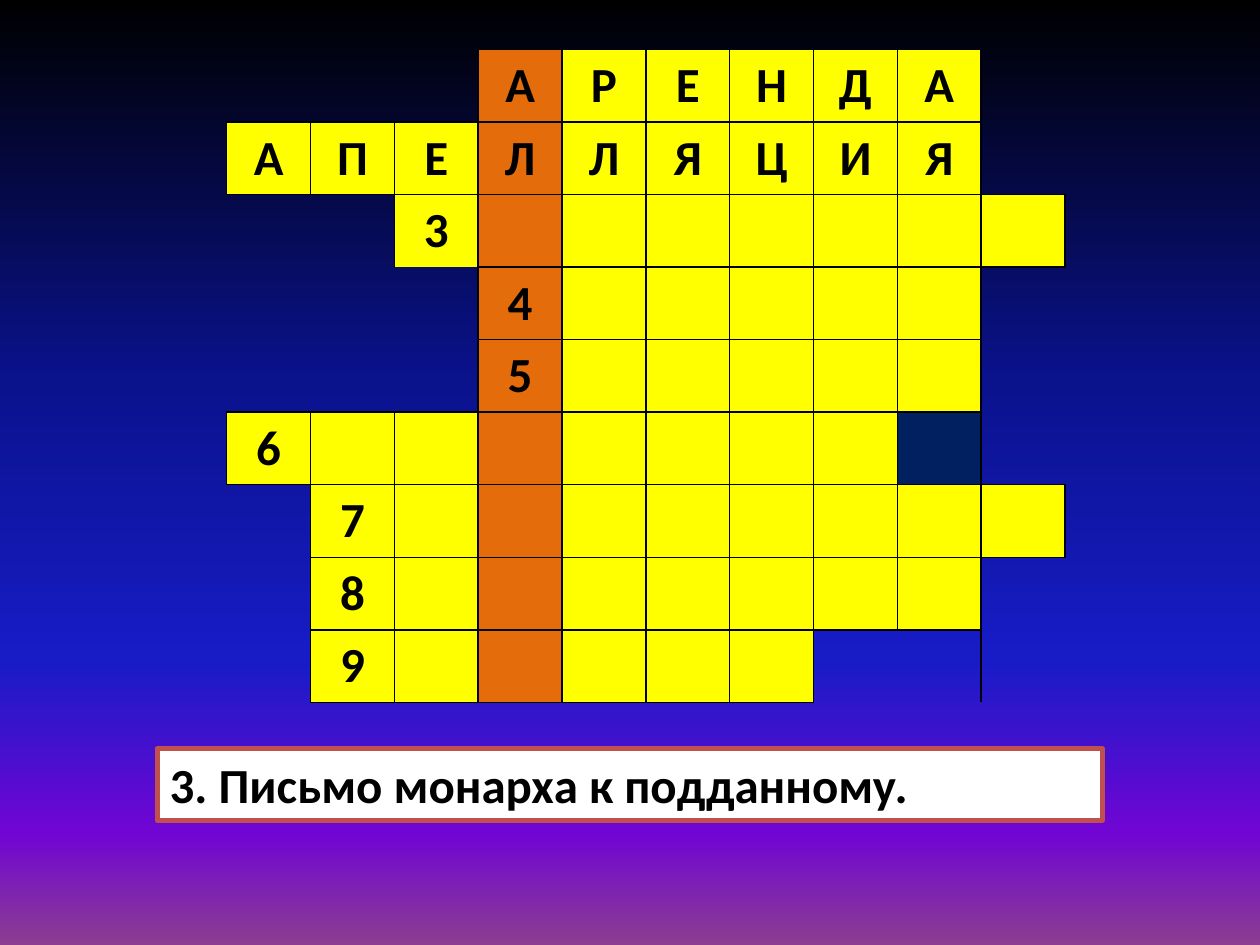
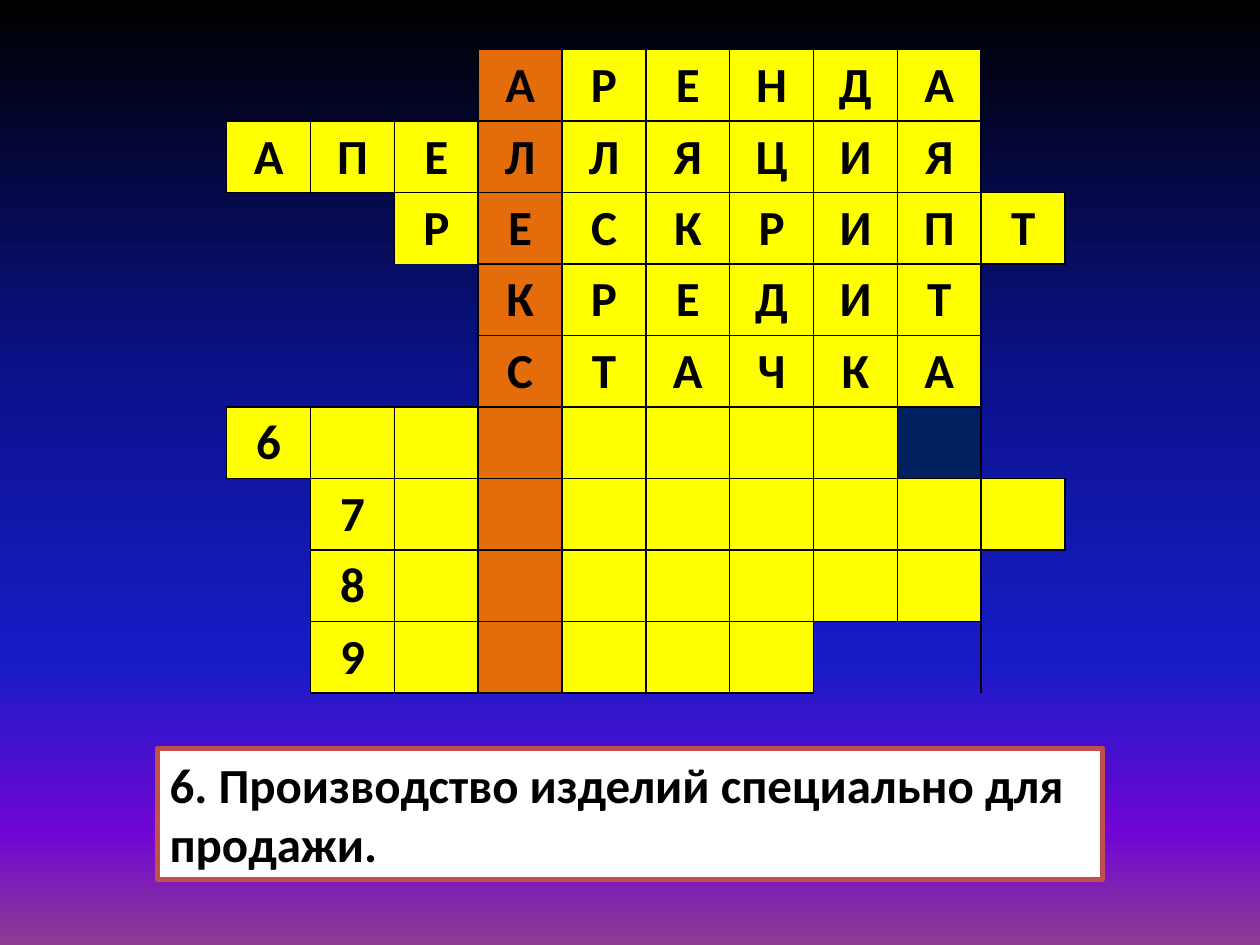
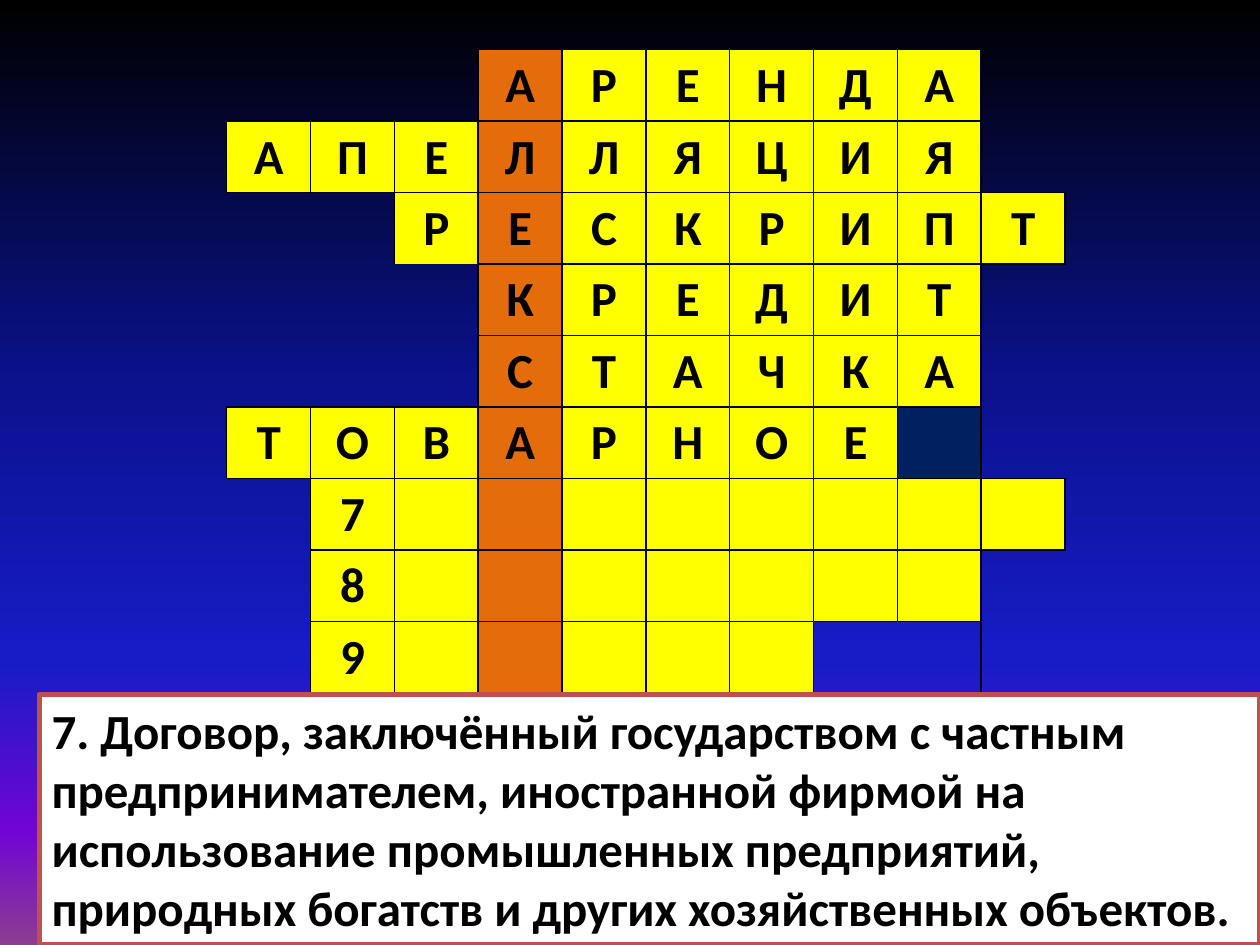
from dataclasses import dataclass
from typing import NamedTuple

from lxml.etree import SubElement
from pptx import Presentation
from pptx.dml.color import RGBColor
from pptx.enum.shapes import MSO_SHAPE
from pptx.enum.text import MSO_ANCHOR, MSO_AUTO_SIZE, PP_ALIGN
from pptx.oxml.ns import qn
from pptx.util import Cm, Pt

BLACK = RGBColor(0x00, 0x00, 0x00)
WHITE = RGBColor(0xFF, 0xFF, 0xFF)
YELLOW = RGBColor(0xFF, 0xFF, 0x00)
ORANGE = RGBColor(0xE4, 0x6C, 0x0A)
NAVY = RGBColor(0x00, 0x20, 0x60)
RED = RGBColor(0xC0, 0x50, 0x4D)
SKY = {
    0: BLACK,
    40: RGBColor(0x0A, 0x12, 0x8C),
    70: RGBColor(0x18, 0x1C, 0xC7),
    88: RGBColor(0x70, 0x05, 0xD4),
    100: RGBColor(0x8C, 0x3D, 0x91),
}

FONT = {"name": "Calibri", "size": Pt(28), "bold": True}
PLAIN = "{2D5ABB26-0587-4C30-8999-92F81FD0307C}"  # table style without lines or fills
SIDES = "LRTB"
COLS = 10
KEY = 3  # column in which the hidden name is read downwards
WIDE, HIGH = Cm(1.69), Cm(1.44)


class Word(NamedTuple):
    start: int
    size: int
    text: str = ""


class Gap(NamedTuple):
    """Cells outside the words, merged, with lines on the given sides."""
    row: int
    col: int
    rows: int
    cols: int
    sides: str
    fill: RGBColor | None = None


@dataclass
class Clue:
    solved: int
    text: str
    left: float = 3.17
    top: float = 15.09
    width: float = 19.05
    height: float = 1.45


WORDS = [
    Word(3, 6, "АРЕНДА"),
    Word(0, 9, "АПЕЛЛЯЦИЯ"),
    Word(2, 8, "РЕСКРИПТ"),
    Word(3, 6, "КРЕДИТ"),
    Word(3, 6, "СТАЧКА"),
    Word(0, 8, "ТОВАРНОЕ"),
    Word(1, 9),
    Word(1, 8),
    Word(1, 6),
]
GAPS = [
    Gap(0, 0, 1, 3, "RB"),
    Gap(0, 9, 2, 1, "LB"),
    Gap(2, 0, 1, 2, "RT"),
    Gap(3, 0, 2, 3, "RB"),
    Gap(3, 9, 3, 1, "LTB"),
    Gap(5, 8, 1, 1, "LTB", NAVY),
    Gap(6, 0, 3, 1, "RT"),
    Gap(7, 9, 2, 1, "LT"),
    Gap(8, 7, 1, 2, "LT"),
]
CLUES = [
    Clue(2, "3. Письмо монарха к подданному."),
    Clue(5, "6. Производство изделий специально для продажи.", height=2.64),
    Clue(6, "7. Договор, заключённый государством с частным предпринимателем, "
            "иностранной фирмой на использование промышленных предприятий, "
            "природных богатств и других хозяйственных объектов.",
         0.79, 14, 24.61, 5.05),
]


def paint_sky(master) -> None:
    fill = master.background.fill
    fill.gradient()
    fill.gradient_angle = 270
    stops = master.element.find(".//" + qn("a:gsLst"))
    for stop in list(stops):
        stops.remove(stop)
    for place, shade in SKY.items():
        stop = SubElement(stops, qn("a:gs"), pos=str(place * 1000))
        SubElement(stop, qn("a:srgbClr"), val=str(shade))


def write(frame, text: str, align: PP_ALIGN) -> None:
    para = frame.paragraphs[0]
    para.alignment = align
    run = para.add_run()
    run.text = text
    for name, value in FONT.items():
        setattr(run.font, name, value)
    run.font.color.rgb = BLACK


def style(cell, fill: RGBColor | None, sides: str = SIDES) -> None:
    """Fill a cell and draw lines on the given sides only."""
    if fill is None:
        cell.fill.background()
    else:
        cell.fill.solid()
        cell.fill.fore_color.rgb = fill
    props = cell._tc.get_or_add_tcPr()
    for spot, side in enumerate(SIDES):
        line = SubElement(props, qn(f"a:ln{side}"), w=str(Pt(1)))
        if side in sides:
            paint = SubElement(line, qn("a:solidFill"))
            SubElement(paint, qn("a:srgbClr"), val=str(BLACK))
        else:
            SubElement(line, qn("a:noFill"))
        props.insert(spot, line)


def add_grid(slide, solved: int) -> None:
    frame = slide.shapes.add_table(len(WORDS), COLS, Cm(4.57), Cm(1),
                                   WIDE * COLS, HIGH * len(WORDS))
    table = frame.table
    table.first_row = table.horz_banding = False
    table._tbl.tblPr.find(qn("a:tableStyleId")).text = PLAIN
    for col in table.columns:
        col.width = WIDE
    for row in table.rows:
        row.height = HIGH
    for row, word in enumerate(WORDS):
        text = word.text if row < solved else str(row + 1)
        for step in range(word.size):
            col = word.start + step
            cell = table.cell(row, col)
            style(cell, ORANGE if col == KEY else YELLOW)
            if step < len(text):
                write(cell.text_frame, text[step], PP_ALIGN.CENTER)
    for gap in GAPS:
        first = table.cell(gap.row, gap.col)
        for row in range(gap.row, gap.row + gap.rows):
            for col in range(gap.col, gap.col + gap.cols):
                style(table.cell(row, col), gap.fill, gap.sides)
        if gap.rows * gap.cols > 1:
            first.merge(table.cell(gap.row + gap.rows - 1, gap.col + gap.cols - 1))


def add_clue(slide, clue: Clue) -> None:
    place = map(Cm, (clue.left, clue.top, clue.width, clue.height))
    box = slide.shapes.add_shape(MSO_SHAPE.RECTANGLE, *place)
    box.shadow.inherit = False
    box.fill.solid()
    box.fill.fore_color.rgb = WHITE
    box.line.color.rgb = RED
    box.line.width = Pt(3)
    frame = box.text_frame
    frame.word_wrap = True
    frame.auto_size = MSO_AUTO_SIZE.SHAPE_TO_FIT_TEXT
    frame.vertical_anchor = MSO_ANCHOR.TOP
    write(frame, clue.text, PP_ALIGN.LEFT)


def main() -> None:
    deck = Presentation()
    deck.slide_width, deck.slide_height = Cm(25.4), Cm(19.05)
    paint_sky(deck.slide_master)
    for clue in CLUES:
        slide = deck.slides.add_slide(deck.slide_layouts[6])
        add_grid(slide, clue.solved)
        add_clue(slide, clue)
    deck.save("out.pptx")


if __name__ == "__main__":
    main()
